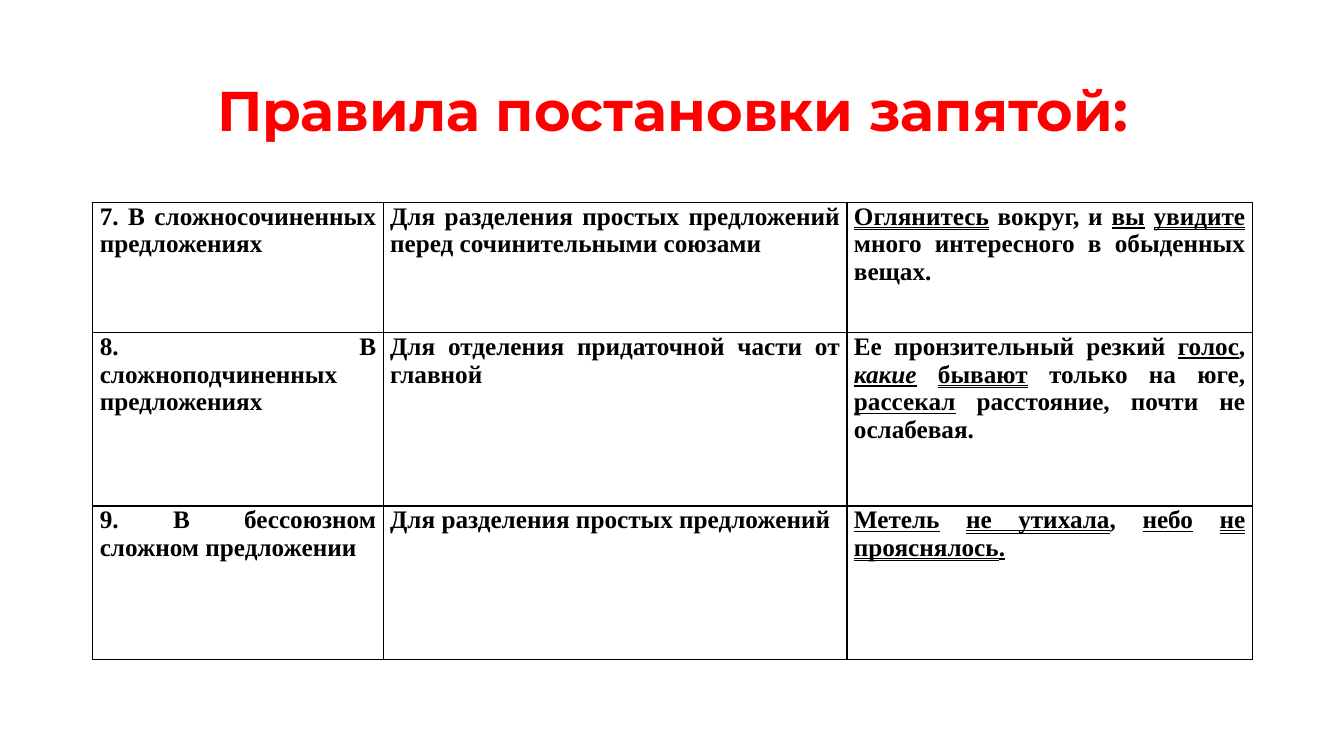
from lxml import etree
from pptx import Presentation
from pptx import util as u
from pptx.dml.color import RGBColor
from pptx.enum import text
from pptx.oxml.ns import qn

COLORS = {"title": "FF0000", "ink": "000000"}
SLIDE_W, SLIDE_H = 13.33, 7.5
MARGIN, CONTENT_W = 0.92, 11.5
COLUMN_WIDTHS = (2.88, 4.6, 4.02)
ROW_HEIGHTS = (1.29, 1.72, 1.52)

PLAIN = text.MSO_UNDERLINE.NONE
SUBJECT = text.MSO_UNDERLINE.SINGLE_LINE
VERB = text.MSO_UNDERLINE.DOUBLE_LINE

# Each cell is a list of runs: wording, underline, and optionally italic.
RULES = [
    [
        [("7. В сложносочиненных предложениях", PLAIN)],
        [("Для разделения простых предложений перед сочинительными союзами", PLAIN)],
        [("Оглянитесь", VERB), (" вокруг, и ", PLAIN), ("вы", SUBJECT), (" ", PLAIN),
         ("увидите", VERB), (" много интересного в обыденных вещах.", PLAIN)],
    ],
    [
        [("8. В сложноподчиненных предложениях", PLAIN)],
        [("Для отделения придаточной части от главной", PLAIN)],
        [("Ее пронзительный резкий ", PLAIN), ("голос", SUBJECT), (", ", PLAIN),
         ("какие", SUBJECT, True), (" ", PLAIN), ("бывают", VERB),
         (" только на юге, ", PLAIN), ("рассекал", SUBJECT),
         (" расстояние, почти не ослабевая.", PLAIN)],
    ],
    [
        [("9. В бессоюзном сложном предложении", PLAIN)],
        [("Для разделения простых предложений", PLAIN)],
        [("Метель", SUBJECT), (" ", PLAIN), ("не утихала", VERB), (", ", PLAIN),
         ("небо", SUBJECT), (" ", PLAIN), ("не прояснялось", VERB), (".", SUBJECT)],
    ],
]


def add_run(paragraph, wording, size, face, color, underline=PLAIN, italic=False):
    run = paragraph.add_run()
    run.text = wording
    font = run.font
    font.size, font.name, font.bold = u.Pt(size), face, True
    font.italic, font.underline = italic, underline
    font.color.rgb = RGBColor.from_string(COLORS[color])


def place_title(title, left, top, width, height):
    title.left, title.top = u.Inches(left), u.Inches(top)
    title.width, title.height = u.Inches(width), u.Inches(height)
    frame = title.text_frame
    frame.word_wrap = True
    frame.vertical_anchor = text.MSO_ANCHOR.MIDDLE
    heading = frame.paragraphs[0]
    heading.alignment = text.PP_ALIGN.CENTER
    heading.line_spacing = 0.9
    add_run(heading, "Правила постановки запятой:", 40, "Montserrat", "title")


def draw_borders(cell):
    """Rule all four sides; borders must precede the fill in the cell properties."""
    properties = cell._tc.get_or_add_tcPr()
    for position, side in enumerate(("a:lnL", "a:lnR", "a:lnT", "a:lnB")):
        line = etree.Element(qn(side), w=str(u.Pt(1)))
        fill = etree.SubElement(line, qn("a:solidFill"))
        etree.SubElement(fill, qn("a:srgbClr"), val=COLORS["ink"])
        properties.insert(position, line)


def fill_cell(cell, runs):
    cell.margin_left = cell.margin_right = u.Inches(0.07)
    cell.margin_top = cell.margin_bottom = 0
    cell.fill.background()
    draw_borders(cell)
    paragraph = cell.text_frame.paragraphs[0]
    paragraph.alignment = text.PP_ALIGN.JUSTIFY
    for wording, *style in runs:
        add_run(paragraph, wording, 18, "Times New Roman", "ink", *style)


def add_rules_table(slide, left, top, width, height):
    rules = slide.shapes.add_table(
        len(RULES), len(COLUMN_WIDTHS),
        u.Inches(left), u.Inches(top), u.Inches(width), u.Inches(height)).table
    rules.first_row = rules.horz_banding = False
    for column, share in zip(rules.columns, COLUMN_WIDTHS):
        column.width = u.Inches(width * share / sum(COLUMN_WIDTHS))
    for row, share, cells in zip(rules.rows, ROW_HEIGHTS, RULES):
        row.height = u.Inches(height * share / sum(ROW_HEIGHTS))
        for cell, runs in zip(row.cells, cells):
            fill_cell(cell, runs)


def main():
    deck = Presentation()
    deck.slide_width, deck.slide_height = u.Inches(SLIDE_W), u.Inches(SLIDE_H)
    slide = deck.slides.add_slide(deck.slide_layouts[5])
    place_title(slide.shapes.title, MARGIN, 0.4, CONTENT_W, 1.45)
    add_rules_table(slide, MARGIN, 2.01, CONTENT_W, sum(ROW_HEIGHTS))
    deck.save("out.pptx")


if __name__ == "__main__":
    main()
